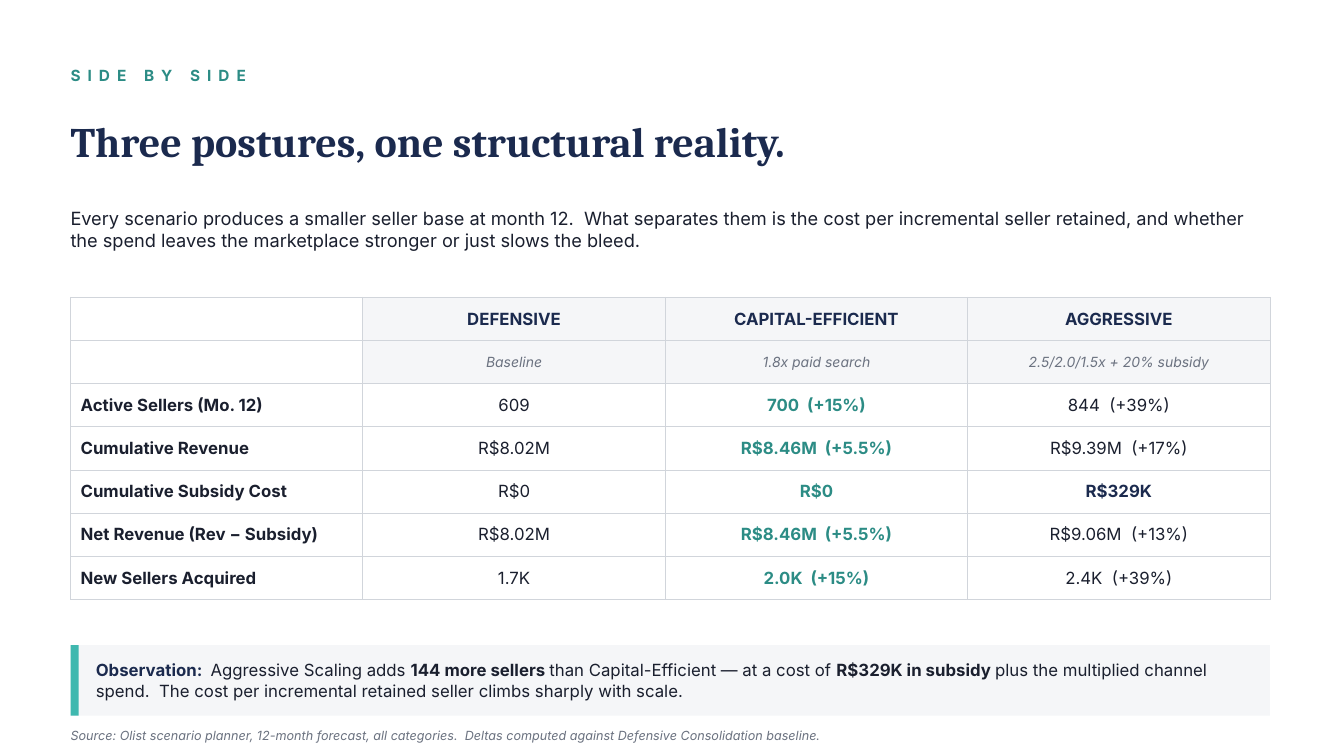
"""Build the slide that compares three seller scenarios."""
from lxml import etree
from pptx import Presentation
from pptx.dml.color import RGBColor
from pptx.enum.shapes import MSO_SHAPE
from pptx.enum.text import MSO_ANCHOR, MSO_AUTO_SIZE, PP_ALIGN
from pptx.oxml import parse_xml
from pptx.oxml.ns import nsdecls
from pptx.util import Pt

NAVY, INK, GREY = "1B2A4E", "1A1F2E", "6B7280"
TEAL, AQUA, PALE, WHITE, RULE = "2C8C85", "3FB8AF", "F5F6F8", "FFFFFF", "D1D5DB"
LEFT, WIDTH = 50.4, 856.8


def color(value):
    return RGBColor.from_string(value)


def style(paragraph, size, value, bold=False, italic=False, name="Inter"):
    font = paragraph.font
    font.name, font.size, font.bold, font.italic = name, Pt(size), bold, italic
    font.color.rgb = color(value)


presentation = Presentation()
presentation.slide_width, presentation.slide_height = Pt(960), Pt(540)
slide = presentation.slides.add_slide(presentation.slide_layouts[5])
shapes = slide.shapes

for left, top, width, height, fill in [
    (LEFT, 460.8, WIDTH, 50.4, PALE),
    (LEFT, 460.8, 5.76, 50.4, AQUA),
]:
    bar = shapes.add_shape(MSO_SHAPE.RECTANGLE, Pt(left), Pt(top), Pt(width), Pt(height))
    bar.shadow.inherit = False
    bar.fill.solid()
    bar.fill.fore_color.rgb = color(fill)
    bar.line.fill.background()

eyebrow, intro, observation, source = [shapes.add_textbox(0, 0, 0, 0) for _ in range(4)]
title = shapes.title
for box, left, top, width, height in [
    (eyebrow, LEFT, 43.2, 432, 21.6),
    (title, LEFT, 72, WIDTH, 57.6),
    (intro, LEFT, 133.2, WIDTH, 61.2),
    (observation, 68.4, 464.4, 831.6, 43.2),
    (source, LEFT, 518.4, 864, 14.4),
]:
    box.left, box.top, box.width, box.height = Pt(left), Pt(top), Pt(width), Pt(height)
    frame = box.text_frame
    frame.word_wrap = True
    frame.auto_size = MSO_AUTO_SIZE.NONE
    frame.vertical_anchor = MSO_ANCHOR.MIDDLE
    frame.margin_left = frame.margin_right = frame.margin_top = frame.margin_bottom = 0
    frame.paragraphs[0].alignment = PP_ALIGN.LEFT

for box, text, size, value, bold, italic, name in [
    (eyebrow, "SIDE BY SIDE", 11, TEAL, True, False, "Inter"),
    (title, "Three postures, one structural reality.", 30, NAVY, True, False, "Cambria"),
    (intro, "Every scenario produces a smaller seller base at month 12.  What separates them is "
     "the cost per incremental seller retained, and whether the spend leaves the marketplace "
     "stronger or just slows the bleed.", 13, INK, False, False, "Inter"),
    (source, "Source: Olist scenario planner, 12-month forecast, all categories.  Deltas computed "
     "against Defensive Consolidation baseline.", 9, GREY, False, True, "Inter"),
]:
    paragraph = box.text_frame.paragraphs[0]
    paragraph.add_run().text = text
    style(paragraph, size, value, bold, italic, name)
eyebrow.text_frame.paragraphs[0].runs[0]._r.get_or_add_rPr().set("spc", "500")

paragraph = observation.text_frame.paragraphs[0]
style(paragraph, 12, INK)
for text, bold, value in [
    ("Observation:  ", True, NAVY),
    ("Aggressive Scaling adds ", False, INK),
    ("144 more sellers ", True, INK),
    ("than Capital-Efficient — at a cost of ", False, INK),
    ("R$329K in subsidy ", True, INK),
    ("plus the multiplied channel spend.  The cost per incremental retained seller climbs "
     "sharply with scale.", False, INK),
]:
    run = paragraph.add_run()
    run.text, run.font.bold = text, bold
    run.font.color.rgb = color(value)

rows = [
    ("", "DEFENSIVE", "CAPITAL-EFFICIENT", "AGGRESSIVE"),
    ("", "Baseline", "1.8x paid search", "2.5/2.0/1.5x + 20% subsidy"),
    ("Active Sellers (Mo. 12)", "609", "700  (+15%)", "844  (+39%)"),
    ("Cumulative Revenue", "R$8.02M", "R$8.46M  (+5.5%)", "R$9.39M  (+17%)"),
    ("Cumulative Subsidy Cost", "R$0", "R$0", "R$329K"),
    ("Net Revenue (Rev − Subsidy)", "R$8.02M", "R$8.46M  (+5.5%)", "R$9.06M  (+13%)"),
    ("New Sellers Acquired", "1.7K", "2.0K  (+15%)", "2.4K  (+39%)"),
]
table = shapes.add_table(len(rows), 4, Pt(LEFT), Pt(212.4), Pt(WIDTH), Pt(216)).table
for column, width in zip(table.columns, [208.8, 216, 216, 216]):
    column.width = Pt(width)

for row_index, row in enumerate(rows):
    table.rows[row_index].height = Pt(216 / len(rows))
    for column_index, text in enumerate(row):
        cell = table.cell(row_index, column_index)
        cell.vertical_anchor = MSO_ANCHOR.MIDDLE
        paragraph = cell.text_frame.paragraphs[0]
        if text:
            paragraph.add_run().text = text
        paragraph.alignment = PP_ALIGN.CENTER if column_index else PP_ALIGN.LEFT
        if row_index == 0:
            style(paragraph, 12, NAVY, bold=True)
        elif row_index == 1:
            style(paragraph, 10, GREY, italic=True)
        elif text == "R$329K":
            style(paragraph, 12, NAVY, bold=True)
        elif column_index == 2:
            style(paragraph, 12, TEAL, bold=True)
        else:
            style(paragraph, 12, INK, bold=column_index == 0)

        properties = cell._tc.get_or_add_tcPr()
        for side in ("lnL", "lnR", "lnT", "lnB"):
            border = parse_xml(f'<a:{side} {nsdecls("a")} w="9525"/>')
            fill = etree.SubElement(border, border.tag.replace(side, "solidFill"))
            etree.SubElement(fill, border.tag.replace(side, "srgbClr"), val=RULE)
            properties.append(border)
        cell.fill.solid()
        cell.fill.fore_color.rgb = color(PALE if row_index < 2 and column_index else WHITE)

presentation.save("out.pptx")
